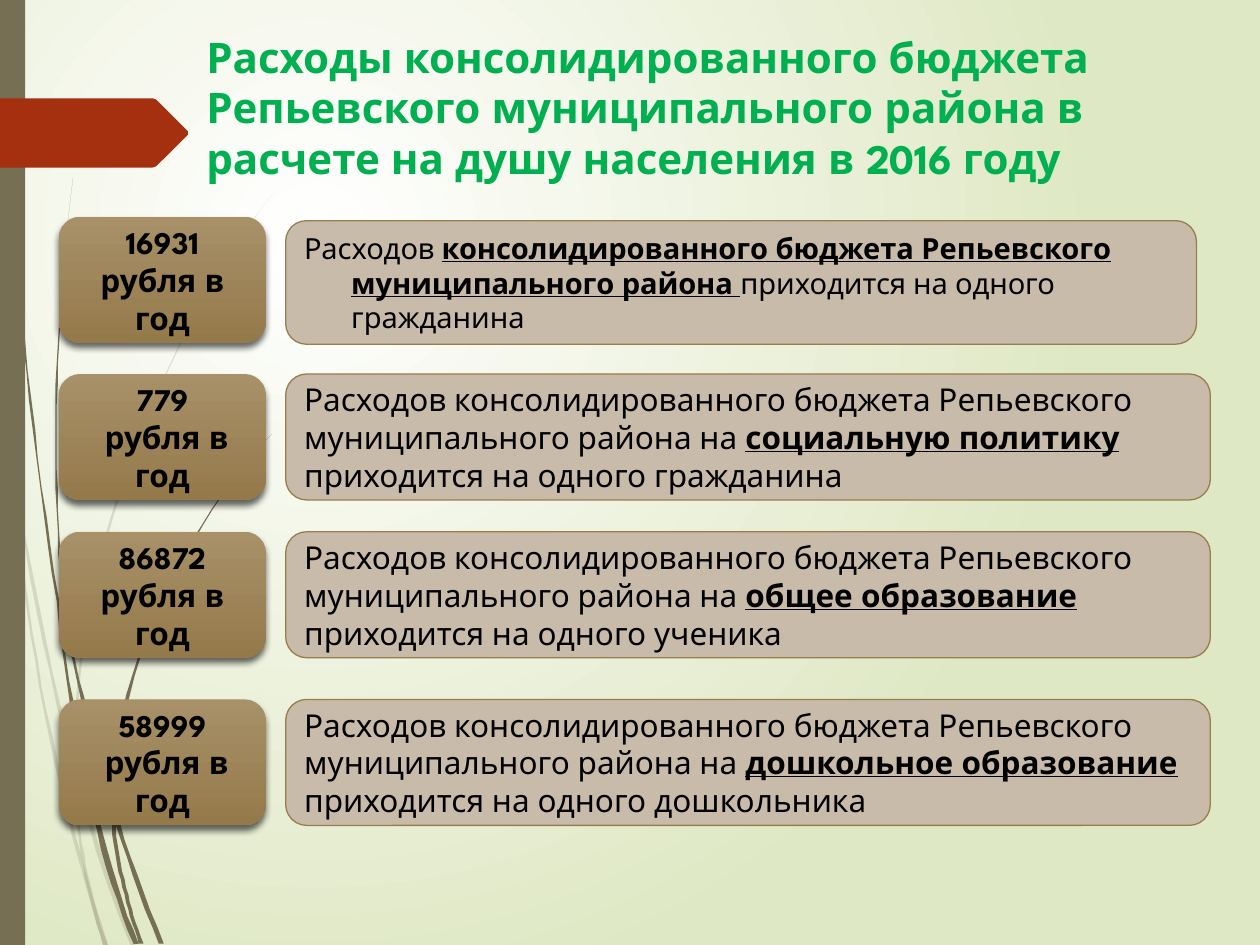
from lxml.etree import SubElement
from pptx import Presentation
from pptx.dml.color import RGBColor
from pptx.enum.shapes import MSO_SHAPE
from pptx.enum.text import MSO_ANCHOR, PP_ALIGN
from pptx.oxml.ns import qn
from pptx.util import Cm, Pt

FONT = "League Spartan"
WHITE = RGBColor(0xFF, 0xFF, 0xFF)
PALE_GREEN = RGBColor(0xDF, 0xE8, 0xC4)
OLIVE = RGBColor(0x76, 0x6F, 0x54)
RUST = RGBColor(0xA5, 0x30, 0x10)
GREEN = RGBColor(0x00, 0xB0, 0x50)
BLACK = RGBColor(0x00, 0x00, 0x00)
BEIGE = RGBColor(0xC8, 0xBB, 0xAA)
BROWN = RGBColor(0x98, 0x7D, 0x4D)
LIGHT_BROWN = RGBColor(0xA8, 0x90, 0x68)
DARK_BROWN = RGBColor(0x94, 0x7A, 0x4B)

presentation = Presentation()
presentation.slide_width, presentation.slide_height = Cm(25.4), Cm(19.05)
slide = presentation.slides.add_slide(presentation.slide_layouts[6])


def add_outline(points, color):
    """Closed, filled outline; points are in hundredths of an inch."""
    builder = slide.shapes.build_freeform(*points[0], scale=Cm(0.0254))
    builder.add_line_segments(points[1:], close=True)
    shape = builder.convert_to_shape()
    shape.shadow.inherit = False
    shape.fill.solid()
    shape.fill.fore_color.rgb = color
    shape.line.fill.background()
    return shape


def add_box(left, top, width, height):
    """Rounded box with vertically centred, wrapping text."""
    shape = slide.shapes.add_shape(MSO_SHAPE.ROUNDED_RECTANGLE,
                                   Cm(left), Cm(top), Cm(width), Cm(height))
    shape.shadow.inherit = False
    shape.text_frame.word_wrap = True
    shape.text_frame.vertical_anchor = MSO_ANCHOR.MIDDLE
    return shape


# Background: radial gradient
fill = slide.background.fill
fill.gradient()
for stop, color in zip(fill.gradient_stops, (WHITE, PALE_GREEN)):
    stop.color.rgb = color
gradient = slide.element.find(".//" + qn("a:gradFill"))
gradient.remove(gradient.find(qn("a:lin")))
radial = SubElement(gradient, qn("a:path"), {"path": "circle"})
SubElement(radial, qn("a:fillToRect"),
           {"l": "50000", "t": "50000", "r": "100000", "b": "100000"})

# Grass: each blade follows a Bezier curve (tip, two controls, root) and
# widens evenly from tip to root; the faint ones lie behind
FAINT, SOLID = 20, 100
STEPS = 20
BLADES = [  # opacity, tip, control, control, root, tip width, root width
    (FAINT, (0, 290), (16, 440), (58, 640), (106, 751), 1, 4),
    (FAINT, (8, 350), (18, 500), (48, 640), (84, 751), 0.5, 4),
    (FAINT, (217, 153), (150, 235), (62, 420), (60, 585), 0.5, 2),
    (FAINT, (60, 585), (57, 640), (66, 700), (84, 751), 2, 3),
    (SOLID, (2.5, 0), (6, 170), (22, 330), (46, 477), 1, 2),
    (SOLID, (46, 477), (52, 550), (78, 680), (108, 749), 2, 5),
    (SOLID, (58, 141), (44, 250), (40, 360), (50, 472), 0.5, 2),
    (SOLID, (50, 472), (62, 560), (92, 660), (128, 749), 2, 4),
    (SOLID, (216, 344), (150, 415), (93, 525), (90, 632), 0.5, 3),
    (SOLID, (90, 632), (88, 670), (100, 715), (112, 749), 3, 3),
]
for opacity, tip, control_1, control_2, root, tip_width, root_width in BLADES:
    left_edge, right_edge = [], []
    for step in range(STEPS + 1):
        t = step / STEPS
        x, y = [(1 - t) ** 3 * a + 3 * (1 - t) ** 2 * t * b + 3 * (1 - t) * t ** 2 * c + t ** 3 * d
                for a, b, c, d in zip(tip, control_1, control_2, root)]
        half_width = (tip_width + (root_width - tip_width) * t) / 2
        left_edge.append((x - half_width, y))
        right_edge.append((x + half_width, y))
    blade = add_outline(left_edge + right_edge[::-1], OLIVE)
    if opacity < SOLID:
        SubElement(blade.element.find(".//" + qn("a:srgbClr")), qn("a:alpha"),
                   {"val": str(opacity * 1000)})

# Side bar and arrow tag
side_bar = slide.shapes.add_shape(MSO_SHAPE.RECTANGLE, 0, 0, Cm(0.51), presentation.slide_height)
side_bar.shadow.inherit = False
side_bar.fill.solid()
side_bar.fill.fore_color.rgb = OLIVE
side_bar.line.fill.background()
TAG_MIDDLE = 105.5
TAG_UPPER_EDGE = [(0, 27.5), (121, 27.5), (124, 26.5), (149, 1.5)]  # x, height above the middle
upper = [(x, TAG_MIDDLE - height) for x, height in TAG_UPPER_EDGE]
lower = [(x, TAG_MIDDLE + height) for x, height in reversed(TAG_UPPER_EDGE)]
add_outline(upper + lower, RUST)

# Title
title = slide.shapes.add_textbox(Cm(3.91), Cm(0.51), Cm(20.22), Cm(3.56))
title.text_frame.word_wrap = True
paragraph = title.text_frame.paragraphs[0]
paragraph.text = ("Расходы консолидированного бюджета Репьевского муниципального "
                  "района в расчете на душу населения в 2016 году")
paragraph.font.name, paragraph.font.size, paragraph.font.bold = FONT, Pt(24), True
paragraph.font.color.rgb = GREEN

# Rows: top, amount, text before, emphasised text, text after
LABEL_LEFT, LABEL_WIDTH = 1.19, 4.17
DESCRIPTION_LEFT, DESCRIPTION_WIDTH = 5.76, 18.64
ROW_HEIGHT = 2.54
HANGING = Cm(0.95)
COMMON = "Расходов консолидированного бюджета Репьевского муниципального района на "
ROWS = [
    (4.37, "16931\nрубля в год", "Расходов ",
     "консолидированного бюджета Репьевского муниципального района ",
     "приходится на одного гражданина"),
    (7.54, "779\n рубля в год", COMMON, "социальную политику ",
     "приходится на одного гражданина"),
    (10.72, "86872 рубля в год", COMMON, "общее образование ",
     "приходится на одного ученика"),
    (14.1, "58999\n рубля в год", COMMON, "дошкольное образование ",
     "приходится на одного дошкольника"),
]
for top, amount, before, emphasised, after in ROWS:
    # Description; the overall total is slightly smaller and has a hanging indent
    is_total = before != COMMON
    if is_total:
        description = add_box(DESCRIPTION_LEFT, 4.45, 18.36, 2.49)
    else:
        description = add_box(DESCRIPTION_LEFT, top, DESCRIPTION_WIDTH, ROW_HEIGHT)
    description.fill.solid()
    description.fill.fore_color.rgb = BEIGE
    description.line.color.rgb = BROWN
    description.line.width = Pt(0.75)
    paragraph = description.text_frame.paragraphs[0]
    paragraph.alignment = PP_ALIGN.LEFT
    paragraph.font.name, paragraph.font.size = FONT, Pt(16.6 if is_total else 18)
    paragraph.font.color.rgb = BLACK
    for text, strong in ((before, False), (emphasised, True), (after, False)):
        run = paragraph.add_run()
        run.text = text
        run.font.bold = run.font.underline = strong
    if is_total:
        paragraph.space_before = Pt(10)
        properties = paragraph._p.get_or_add_pPr()
        properties.set("marL", str(HANGING))
        properties.set("indent", str(-HANGING))

    # Amount label with gradient and soft shadow
    label = add_box(LABEL_LEFT, top, LABEL_WIDTH, ROW_HEIGHT)
    label.fill.gradient()
    label.fill.gradient_angle = 270
    for stop, color in zip(label.fill.gradient_stops, (LIGHT_BROWN, DARK_BROWN)):
        stop.color.rgb = color
    label.line.fill.background()
    shadow = SubElement(label.element.spPr.find(qn("a:effectLst")), qn("a:outerShdw"),
                        {"blurRad": str(Pt(4)), "dist": str(Pt(3)), "dir": "5400000",
                         "rotWithShape": "0"})
    shadow_color = SubElement(shadow, qn("a:srgbClr"), {"val": str(BLACK)})
    SubElement(shadow_color, qn("a:alpha"), {"val": "60000"})
    label.text_frame.text = amount
    for paragraph in label.text_frame.paragraphs:
        paragraph.alignment = PP_ALIGN.CENTER
        paragraph.font.name, paragraph.font.size, paragraph.font.bold = FONT, Pt(18), True
        paragraph.font.color.rgb = BLACK

presentation.save("out.pptx")
